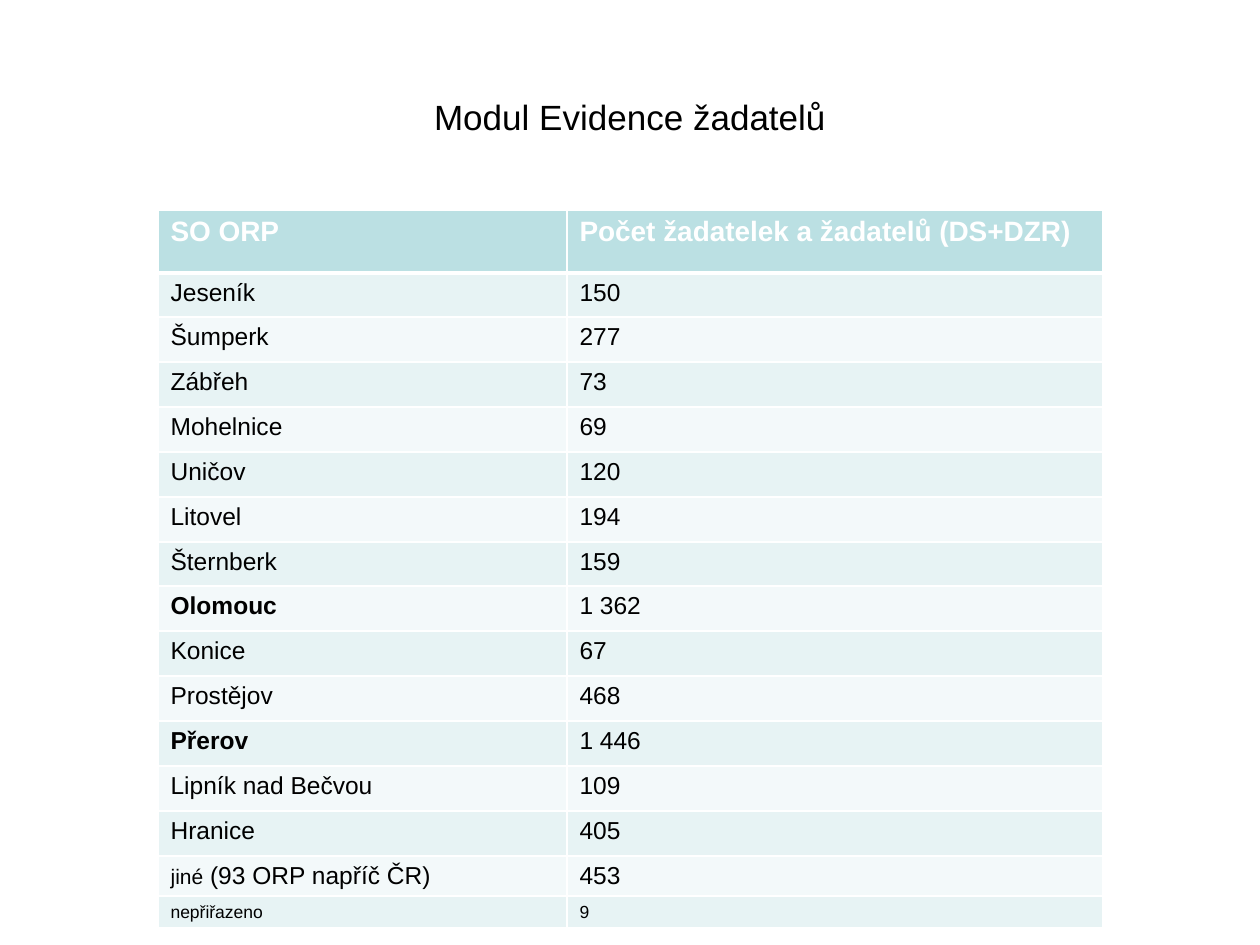
import pptx
import pptx.util
import pptx.dml.color
import pptx.enum.text
import pptx.oxml
import pptx.oxml.ns
from dataclasses import dataclass
from lxml import etree

SCALE = 914400 / 126  # EMU in one px


def px(num):
    return pptx.util.Emu(round(num * SCALE))


@dataclass
class Theme:
    font: str = "Arial"
    ink: str = "000000"
    white: str = "FFFFFF"
    head: str = "BBE0E3"
    bands: tuple = ("E7F3F4", "F3F9FA")
    title: int = 20
    label: int = 16
    body: int = 14
    small: int = 12
    tiny: int = 10


def write(para, text, *, font, size, color, bold=False):
    run = para.add_run()
    run.text = text
    run.font.name = font
    run.font.size = pptx.util.Pt(size)
    run.font.bold = bold
    run.font.color.rgb = pptx.dml.color.RGBColor.from_string(color)


class Page:
    def __init__(self, slide, theme):
        self.slide = slide
        self.theme = theme

    def title(self, text, left, top, width, height):
        shape = self.slide.shapes.title
        shape.left, shape.top = px(left), px(top)
        shape.width, shape.height = px(width), px(height)
        frame = shape.text_frame
        frame.word_wrap = True
        frame.vertical_anchor = pptx.enum.text.MSO_ANCHOR.MIDDLE
        para = frame.paragraphs[0]
        para.alignment = pptx.enum.text.PP_ALIGN.CENTER
        write(para, text, font=self.theme.font, size=self.theme.title,
              color=self.theme.ink)

    def edge(self, cell, side, width):
        props = cell._tc.get_or_add_tcPr()
        name = pptx.oxml.ns.qn
        line = etree.SubElement(props, name("a:" + side),
                                w=str(pptx.util.Pt(width)))
        fill = etree.SubElement(line, name("a:solidFill"))
        etree.SubElement(fill, name("a:srgbClr"), val=self.theme.white)

    def cell(self, cell, runs, fill, color, base=1, top=1):
        for side, width in (("lnL", 1), ("lnR", 1), ("lnT", top), ("lnB", base)):
            self.edge(cell, side, width)
        cell.fill.solid()
        cell.fill.fore_color.rgb = pptx.dml.color.RGBColor.from_string(fill)
        para = cell.text_frame.paragraphs[0]
        for text, size, bold in runs:
            write(para, text, font=self.theme.font, size=size, color=color,
                  bold=bold)

    def table(self, head, rows, left, top, cols, highs):
        theme = self.theme
        frame = self.slide.shapes.add_table(
            len(highs), len(cols), px(left), px(top),
            px(sum(cols)), px(sum(highs)))
        grid = frame.table
        grid.horz_banding = False
        for col, width in zip(grid.columns, cols):
            col.width = px(width)
        for row, high in zip(grid.rows, highs):
            row.height = px(high)
        for col, text in enumerate(head):
            self.cell(grid.cell(0, col), [(text, theme.label, True)],
                      theme.head, theme.white, base=3)
        for num, row in enumerate(rows, 1):
            fill = theme.bands[(num - 1) % 2]
            for col, runs in enumerate(row):
                self.cell(grid.cell(num, col), runs, fill, theme.ink,
                          top=3 if num == 1 else 1)


TOWNS = [
    ("Jeseník", "150"), ("Šumperk", "277"), ("Zábřeh", "73"),
    ("Mohelnice", "69"), ("Uničov", "120"), ("Litovel", "194"),
    ("Šternberk", "159"), ("Olomouc", "1 362"), ("Konice", "67"),
    ("Prostějov", "468"), ("Přerov", "1 446"),
    ("Lipník nad Bečvou", "109"), ("Hranice", "405"),
]
STRONG = {"Olomouc", "Přerov"}


def main():
    theme = Theme()
    deck = pptx.Presentation()
    deck.slide_width, deck.slide_height = px(1260), px(945)
    page = Page(deck.slides.add_slide(deck.slide_layouts[5]), theme)

    # Title
    page.title("Modul Evidence žadatelů", 63, 38, 1134, 157)

    # Table rows: towns, then the two closing lines
    body = theme.body
    rows = [([(town, body, town in STRONG)], [(count, body, False)])
            for town, count in TOWNS]
    rows.append(([("jiné", theme.small, False),
                  (" (93 ORP napříč ČR)", body, False)],
                 [("453", body, False)]))
    rows.append(([("nepřiřazeno", theme.tiny, False)],
                 [("9", theme.tiny, False)]))

    # Town rows share 583 px evenly
    count = len(TOWNS)
    marks = [583 * num // count for num in range(count + 1)]
    highs = [low - high for high, low in zip(marks, marks[1:])]
    page.table(("SO ORP", "Počet žadatelek a žadatelů (DS+DZR)"), rows,
               158, 210, (409, 536), [63, *highs, 23, 23])

    deck.save("out.pptx")


if __name__ == "__main__":
    main()
